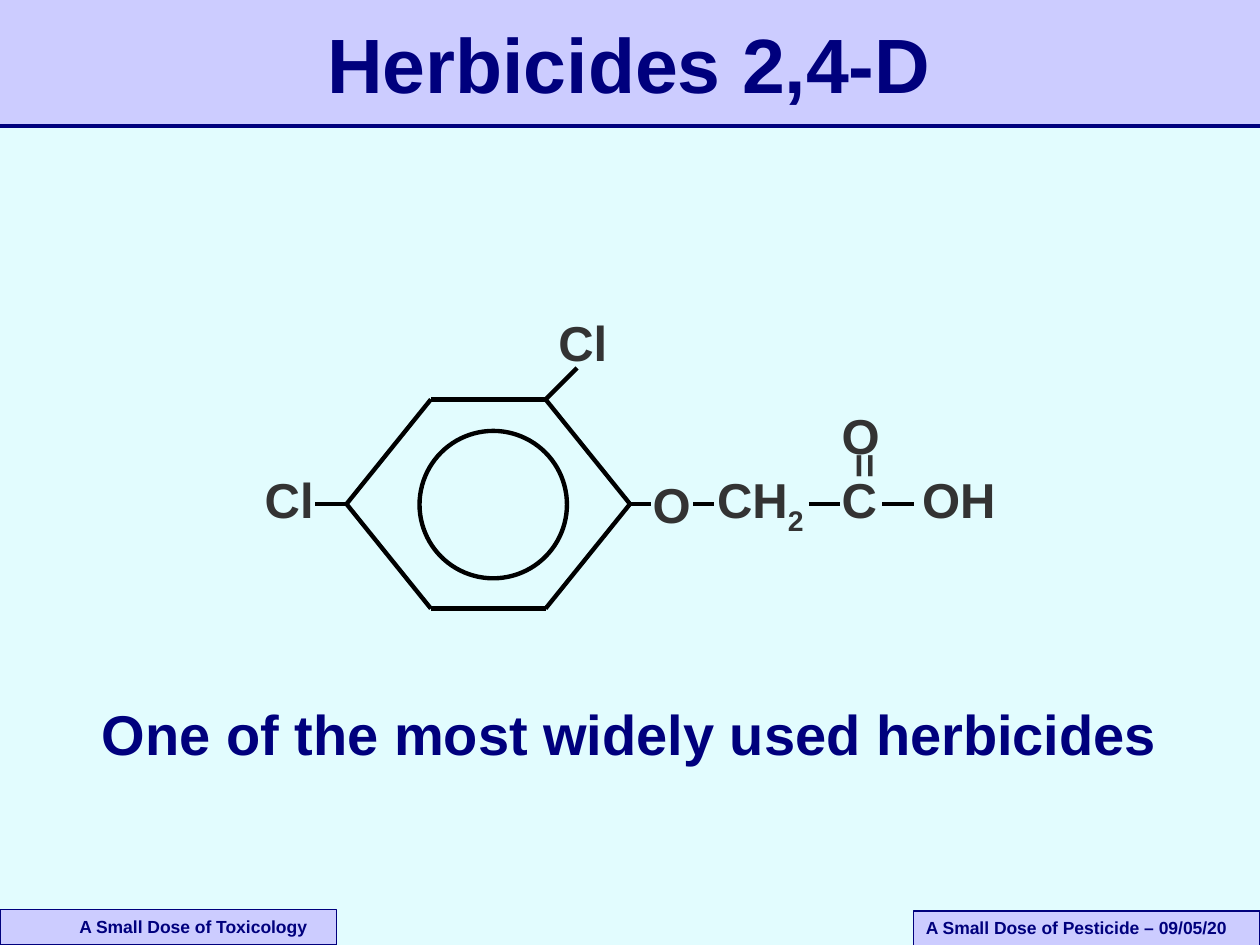
from itertools import pairwise
from lxml import etree
from pptx import Presentation
from pptx.dml.color import RGBColor
from pptx.enum import shapes as es, text as et
from pptx.oxml.ns import qn
from pptx.util import Inches, Pt


class Theme:
    font = "Arial"
    back, band, navy = "E2FCFE", "CCCCFF", "00007D"
    atom, bond = "333333", "000000"
    title, body, label, sign, foot = 44, 32, 28, 24, 10
    rule, edge, stroke = 2, 0.75, 2.5


TITLE = "Herbicides 2,4-D"
CLAIM = "One of the most widely used herbicides"
# text, box, left inset
FEET = [
    ("A Small Dose of Toxicology", (0, 7.22, 2.67, 0.28), 0.63),
    ("A Small Dose of Pesticide – 09/05/20", (7.25, 7.23, 2.75, 0.28), 0.1),
]
MID = 4
RING = [(2.75, MID), (3.42, 3.17), (4.33, 3.17),
        (5, MID), (4.33, 4.83), (3.42, 4.83)]
CORE = (3.33, 3.42, 1.17, 1.17)
CHAIN = [(2.5, 2.75), (5, 5.17), (5.5, 5.67), (6.42, 6.67), (7, 7.25)]
BRANCH = ((4.33, 3.17), (4.58, 2.92))
# text, subscript, left, top, width
ATOMS = [
    ("Cl", "", 4.33, 2.43, 0.59),
    ("Cl", "", 2, 3.68, 0.59),
    ("O", "", 5.08, 3.72, 0.5),
    ("CH", "2", 5.58, 3.68, 0.91),
    ("C", "", 6.58, 3.68, 0.48),
    ("OH", "", 7.22, 3.68, 0.78),
    ("O", "", 6.58, 3.17, 0.5),
]
DOUBLE = (6.64, 3.45, 0.4, 0.5)


def rgb(code):
    return RGBColor.from_string(code)


def span(box):
    return [Inches(n) for n in box]


def shape(tree, kind, box, fill=None, line=None, width=0):
    item = tree.add_shape(kind, *span(box))
    item.shadow.inherit = False
    if fill:
        item.fill.solid()
        item.fill.fore_color.rgb = rgb(fill)
    else:
        item.fill.background()
    if line:
        item.line.color.rgb = rgb(line)
        item.line.width = Pt(width)
    else:
        item.line.fill.background()
    return item


def line(tree, start, end, color=Theme.bond, width=Theme.stroke):
    item = tree.add_connector(es.MSO_CONNECTOR.STRAIGHT, *span(start + end))
    item.line.color.rgb = rgb(color)
    item.line.width = Pt(width)
    etree.SubElement(item._element.spPr, qn("a:effectLst"))


def write(item, words, size, color=Theme.navy, sub="", wrap=True, inset=0.1,
          align=et.PP_ALIGN.CENTER, anchor=et.MSO_ANCHOR.TOP):
    """Fill a shape with one paragraph, ending in an optional subscript."""
    frame = item.text_frame
    frame.word_wrap = wrap
    frame.vertical_anchor = anchor
    frame.margin_left = Inches(inset)
    para = frame.paragraphs[0]
    para.alignment = align
    for part in filter(None, (words, sub)):
        run = para.add_run()
        run.text = part
        run.font.name = Theme.font
        run.font.size = Pt(size)
        run.font.bold = True
        run.font.color.rgb = rgb(color)
    if sub:
        run._r.get_or_add_rPr().set("baseline", "-25000")


def frame(tree):
    rect = es.MSO_SHAPE.RECTANGLE
    shape(tree, rect, (0, 0, 10, 1), Theme.band)
    line(tree, (0, 1), (10, 1), Theme.navy, Theme.rule)
    for words, box, inset in FEET:
        foot = shape(tree, rect, box, Theme.band, Theme.navy, Theme.edge)
        write(foot, words, Theme.foot, inset=inset, align=et.PP_ALIGN.LEFT)


def molecule(tree):
    shape(tree, es.MSO_SHAPE.OVAL, CORE, None, Theme.bond, Theme.stroke)
    for start, end in pairwise(RING + RING[:1]):
        line(tree, start, end)
    for left, right in CHAIN:
        line(tree, (left, MID), (right, MID))
    line(tree, *BRANCH)
    for words, sub, left, top, width in ATOMS:
        box = tree.add_textbox(*span((left, top, width, 0.57)))
        write(box, words, Theme.label, Theme.atom, sub=sub, wrap=False)
    sign = tree.add_textbox(*span(DOUBLE))
    sign.rotation = 270
    write(sign, "=", Theme.sign, Theme.atom, wrap=False)


def main():
    deck = Presentation()
    deck.slide_width, deck.slide_height = Inches(10), Inches(7.5)
    slide = deck.slides.add_slide(deck.slide_layouts[6])
    slide.background.fill.solid()
    slide.background.fill.fore_color.rgb = rgb(Theme.back)
    tree = slide.shapes
    frame(tree)
    head = tree.add_textbox(*span((0.58, 0.08, 8.83, 0.83)))
    write(head, TITLE, Theme.title, anchor=et.MSO_ANCHOR.MIDDLE)
    molecule(tree.add_group_shape().shapes)
    claim = tree.add_textbox(*span((0.5, 5.5, 9, 0.63)))
    write(claim, CLAIM, Theme.body)
    deck.save("out.pptx")


if __name__ == "__main__":
    main()
